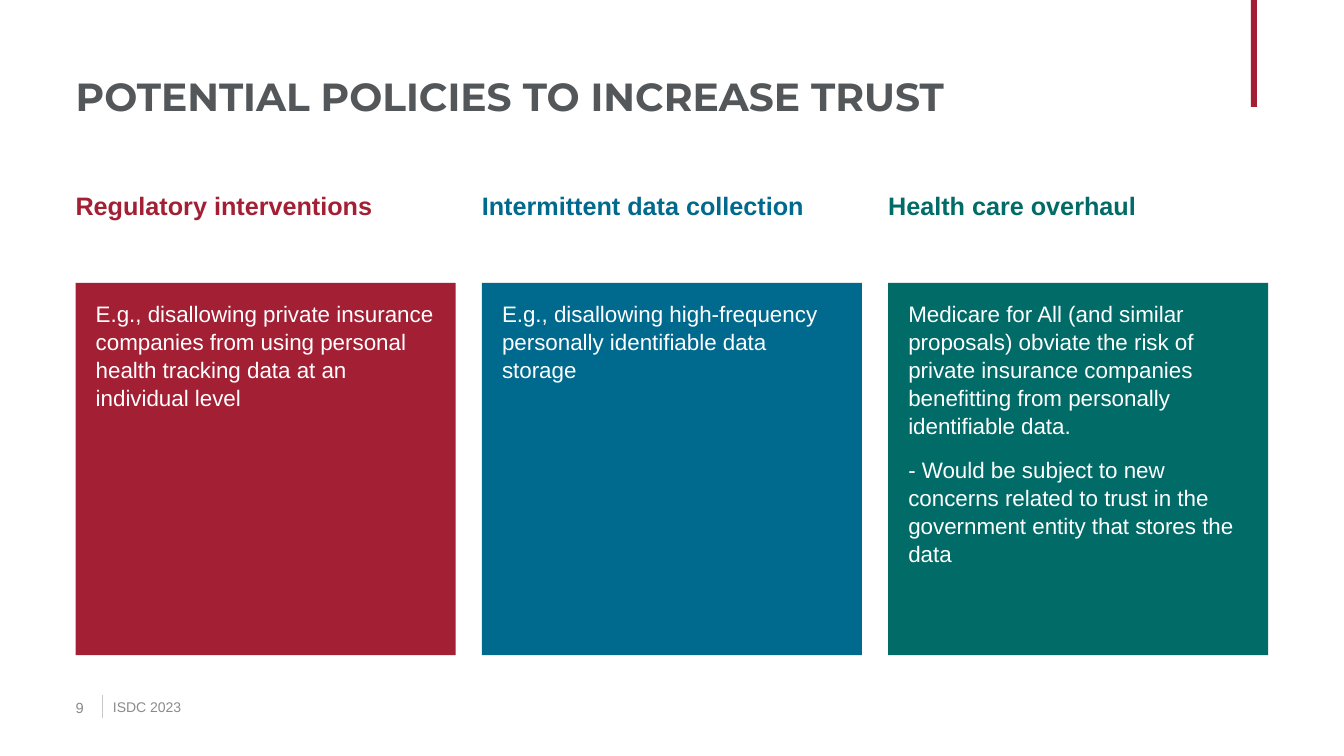
"""Builds the slide on potential policies to increase trust."""
from pptx import Presentation
from pptx.dml.color import RGBColor
from pptx.enum import shapes, text
from pptx.util import Pt

COLORS = {"red": "A31F34", "blue": "00698E", "green": "006B67", "title": "545759",
          "footer": "8A8B8C", "rule": "C9C8C7", "white": "FFFFFF"}
TITLE = "POTENTIAL POLICIES TO INCREASE TRUST"
POLICIES = [
    ("Regulatory interventions", "red",
     ["E.g., disallowing private insurance companies from using personal health "
      "tracking data at an individual level"]),
    ("Intermittent data collection", "blue",
     ["E.g., disallowing high-frequency personally identifiable data storage"]),
    ("Health care overhaul", "green",
     ["Medicare for All (and similar proposals) obviate the risk of private insurance "
      "companies benefitting from personally identifiable data.",
      "- Would be subject to new concerns related to trust in the government entity "
      "that stores the data"]),
]
PAGE_NUMBER = "9"
EVENT = "ISDC 2023"

LEFT, COLUMN_WIDTH, COLUMN_PITCH = 54, 271.5, 290.2
HEADING_TOP, HEADING_HEIGHT = 134.8, 67
PANEL_TOP, PANEL_HEIGHT = 202, 266


def rgb(name):
    return RGBColor.from_string(COLORS[name])


def write(sp, paragraphs, size, color, insets, bold=False, font="Arial",
          anchor=text.MSO_ANCHOR.TOP, after=0, spacing=1.0):
    tf = sp.text_frame
    tf.word_wrap = True
    tf.vertical_anchor = anchor
    tf.margin_left, tf.margin_top, tf.margin_right, tf.margin_bottom = map(Pt, insets)
    for i, line in enumerate(paragraphs):
        p = tf.paragraphs[0] if i == 0 else tf.add_paragraph()
        p.alignment = text.PP_ALIGN.LEFT
        p.space_after = Pt(after)
        p.line_spacing = spacing
        r = p.add_run()
        r.text = line
        r.font.name, r.font.size, r.font.bold = font, Pt(size), bold
        r.font.color.rgb = rgb(color)


def add_text(s, box, *args, **kwargs):
    write(s.shapes.add_textbox(*map(Pt, box)), *args, **kwargs)


def add_block(s, box, color):
    sp = s.shapes.add_shape(shapes.MSO_SHAPE.RECTANGLE, *map(Pt, box))
    sp.shadow.inherit = False
    sp.fill.solid()
    sp.fill.fore_color.rgb = rgb(color)
    sp.line.fill.background()
    return sp


def add_footer(s):
    sp = s.shapes.add_shape(shapes.MSO_SHAPE.LINE_CALLOUT_1_NO_BORDER,
                            Pt(73.6), Pt(496.6), Pt(260), Pt(16.6))
    sp.shadow.inherit = False
    sp.fill.background()
    sp.line.color.rgb = rgb("rule")
    sp.line.width = Pt(0.75)
    for i, value in enumerate((0, 0, 0.98, 0)):
        sp.adjustments[i] = value
    middle = text.MSO_ANCHOR.MIDDLE
    write(sp, [EVENT], 10, "footer", (7.2, 3.6, 7.2, 3.6), anchor=middle)
    add_text(s, (LEFT, 491, 19.6, 29), [PAGE_NUMBER], 10.5, "footer",
             (0, 3.6, 0, 3.6), anchor=middle)


def main():
    prs = Presentation()
    prs.slide_width, prs.slide_height = Pt(960), Pt(540)
    s = prs.slides.add_slide(prs.slide_layouts[6])
    add_block(s, (893.6, 0, 4.3, 76.3), "red")
    add_text(s, (LEFT, 24, 707, 89), [TITLE], 28, "title", (0, 3.6, 7.2, 3.6),
             bold=True, font="Montserrat", anchor=text.MSO_ANCHOR.MIDDLE)
    for i, (heading, color, paragraphs) in enumerate(POLICIES):
        x = LEFT + i * COLUMN_PITCH
        add_text(s, (x, HEADING_TOP, COLUMN_WIDTH, HEADING_HEIGHT), [heading], 18, color,
                 (0, 0, 7.2, 3.6), bold=True, after=12, spacing=1.04)
        panel = add_block(s, (x, PANEL_TOP, COLUMN_WIDTH, PANEL_HEIGHT), color)
        write(panel, paragraphs, 16, "white", (14.4, 11.5, 14.4, 11.5),
              after=12, spacing=1.04)
    add_footer(s)
    prs.save("out.pptx")


if __name__ == "__main__":
    main()
